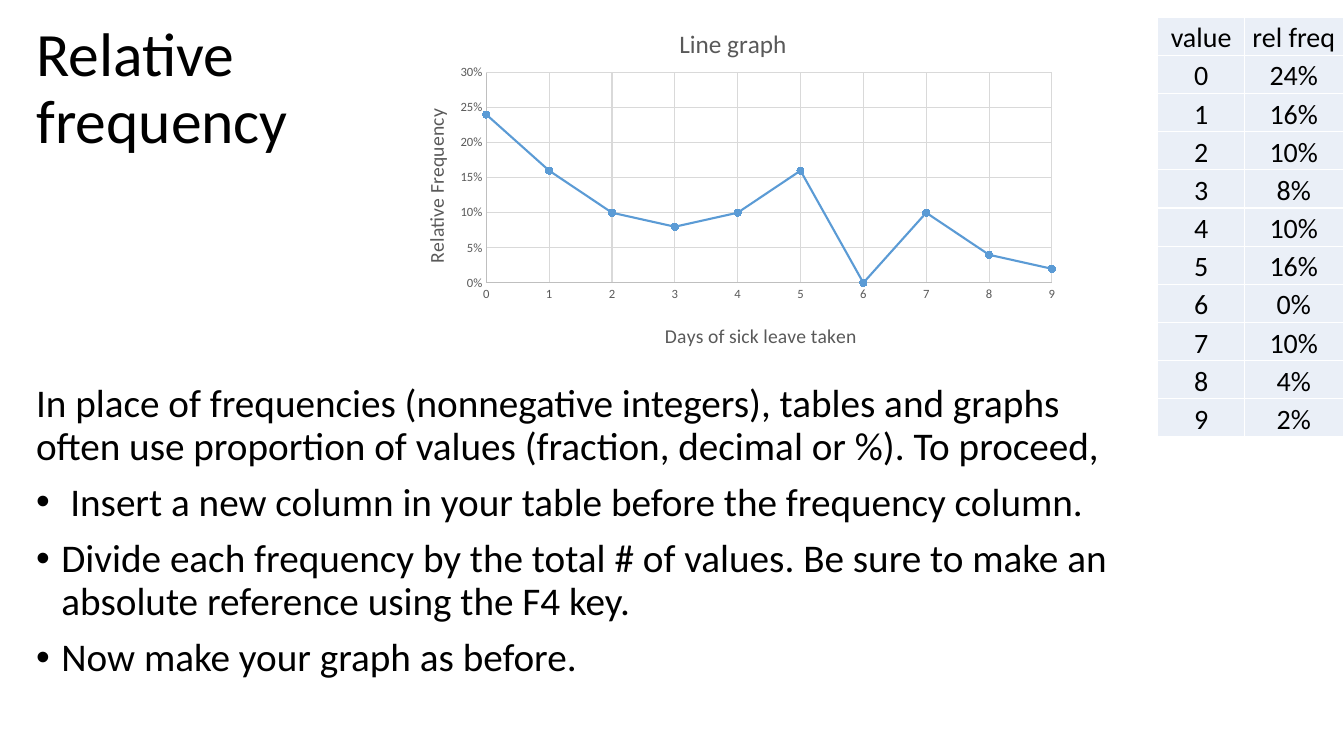
"""Build the relative frequency slide with its line graph, table and steps."""
from lxml.etree import SubElement as Sub
from pptx import Presentation
from pptx.chart.data import XyChartData
from pptx.dml.color import RGBColor
from pptx.enum.chart import XL_CHART_TYPE as Kind, XL_MARKER_STYLE as Mark, XL_TICK_MARK as Tick
from pptx.enum.text import MSO_ANCHOR as Anchor, PP_ALIGN as Align
from pptx.oxml.ns import qn
from pptx.util import Cm, Pt

hue = RGBColor.from_string


def style(font, size, tone):
    for key, val in {"name": "Calibri", "size": Pt(size), "bold": False}.items():
        setattr(font, key, val)
    font.color.rgb = hue(tone)


def place(node, spots):
    layout = node.find(qn("c:layout"))
    if layout is None:
        layout = Sub(node, qn("c:layout"))
        node.insert(len(node.findall(qn("c:tx"))), layout)
    manual = Sub(layout, qn("c:manualLayout"))
    for key, val in spots.items():
        Sub(manual, qn("c:" + key)).set("val", str(val))


deck = Presentation()
deck.slide_width, deck.slide_height = Cm(33.87), Cm(19.05)
slide = deck.slides.add_slide(deck.slide_layouts[5])
shapes = slide.shapes

title = shapes.title
spot = {"left": Cm(0.66), "top": Cm(0.43), "width": Cm(7.47), "height": Cm(3.68)}
for key, val in spot.items():
    setattr(title, key, val)
title.text_frame.text = "Relative\vfrequency"
title.text_frame.vertical_anchor = Anchor.MIDDLE
head = title.text_frame.paragraphs[0]
head.alignment, head.line_spacing = Align.LEFT, 0.9
for run in head.runs:
    style(run.font, 44, "000000")

steps = [
    "In place of frequencies (nonnegative integers), tables and graphs often use "
    "proportion of values (fraction, decimal or %). To proceed,",
    " Insert a new column in your table before the frequency column.",
    "Divide each frequency by the total # of values. Be sure to make an absolute "
    "reference using the F4 key.",
    "Now make your graph as before.",
]
body = shapes.add_textbox(Cm(0.66), Cm(9.55), Cm(27.91), Cm(9.5)).text_frame
body.word_wrap = True
for i, step in enumerate(steps):
    para = body.add_paragraph() if i else body.paragraphs[0]
    para.line_spacing = 0.9
    if i:
        para.space_before = Pt(10)
        props = para._p.get_or_add_pPr()
        props.set("marL", str(Cm(0.64)))
        props.set("indent", str(-Cm(0.64)))
        Sub(props, qn("a:buFont")).set("typeface", "Arial")
        Sub(props, qn("a:buChar")).set("char", "•")
    run = para.add_run()
    run.text = step
    style(run.font, 28, "000000")

freqs = [0.24, 0.16, 0.1, 0.08, 0.1, 0.16, 0, 0.1, 0.04, 0.02]
rows = [("value", "rel freq")] + [(str(day), f"{freq:.0%}") for day, freq in enumerate(freqs)]
frame = shapes.add_table(len(rows), 2, Cm(29.18), Cm(0.43), Cm(4.67), Cm(10.59))
table = frame.table
table.first_row = table.horz_banding = False
for col, wide in zip(table.columns, (2.18, 2.49)):
    col.width = Cm(wide)
inset = {"margin_left": Cm(0.03), "margin_right": Cm(0.03), "margin_top": Cm(0.03),
         "margin_bottom": 0, "vertical_anchor": Anchor.BOTTOM}
for r, row in enumerate(rows):
    table.rows[r].height = Cm(10.59 / len(rows))
    for c, text in enumerate(row):
        cell = table.cell(r, c)
        for key, val in inset.items():
            setattr(cell, key, val)
        for side in "LRTB":
            edge = Sub(cell._tc.get_or_add_tcPr(), qn("a:ln" + side), w=str(Pt(1)))
            Sub(Sub(edge, qn("a:solidFill")), qn("a:srgbClr")).set("val", "FFFFFF")
        cell.fill.solid()
        cell.fill.fore_color.rgb = hue("EAEFF7")
        cell.text = text
        para = cell.text_frame.paragraphs[0]
        para.alignment = Align.CENTER
        style(para.runs[0].font, 20, "000000")

data = XyChartData(number_format="0%")
points = data.add_series("Series 1")
for day, freq in enumerate(freqs):
    points.add_data_point(day, freq)
chart = shapes.add_chart(Kind.XY_SCATTER_LINES, Cm(9.88), 0, Cm(16.97), Cm(9.14), data).chart
chart.has_legend = False
style(chart.font, 10, "000000")
place(chart._chartSpace.chart.plotArea, {
    "layoutTarget": "inner", "xMode": "edge", "yMode": "edge",
    "x": 0.14, "y": 0.2, "w": 0.84, "h": 0.58})

across, up = chart.category_axis, chart.value_axis
for axis, top, unit, form in ((across, 9, 1, "0"), (up, 0.3, 0.05, "0%")):
    looks = {"minimum_scale": 0, "maximum_scale": top, "major_unit": unit,
             "major_tick_mark": Tick.NONE, "minor_tick_mark": Tick.NONE,
             "has_major_gridlines": True}
    for key, val in looks.items():
        setattr(axis, key, val)
    axis.tick_labels.number_format = form
    axis.tick_labels.number_format_is_linked = False
    style(axis.tick_labels.font, 9, "595959")
    for line, tone in ((axis.format.line, "BFBFBF"), (axis.major_gridlines.format.line, "D9D9D9")):
        line.color.rgb, line.width = hue(tone), Pt(0.75)

labels = (
    (chart.chart_title, "Line graph", 18, 0.42, 0.06),
    (across.axis_title, "Days of sick leave taken", 14, 0.4, 0.88),
    (up.axis_title, "Relative Frequency", 14, 0.04, 0.29),
)
for label, text, size, x, y in labels:
    label.text_frame.text = text
    style(label.text_frame.paragraphs[0].runs[0].font, size, "595959")
    place(label._element, {"xMode": "edge", "yMode": "edge", "x": x, "y": y})
up.axis_title.text_frame._txBody.bodyPr.set("rot", "-5400000")

chart.plots[0].vary_by_categories = False
series = chart.plots[0].series[0]
series.smooth = False
series.format.line.color.rgb, series.format.line.width = hue("5B9BD5"), Pt(1.5)
series.marker.style, series.marker.size = Mark.CIRCLE, 5
series.marker.format.fill.solid()
series.marker.format.fill.fore_color.rgb = hue("5B9BD5")
series.marker.format.line.color.rgb = hue("5B9BD5")

deck.save("out.pptx")
